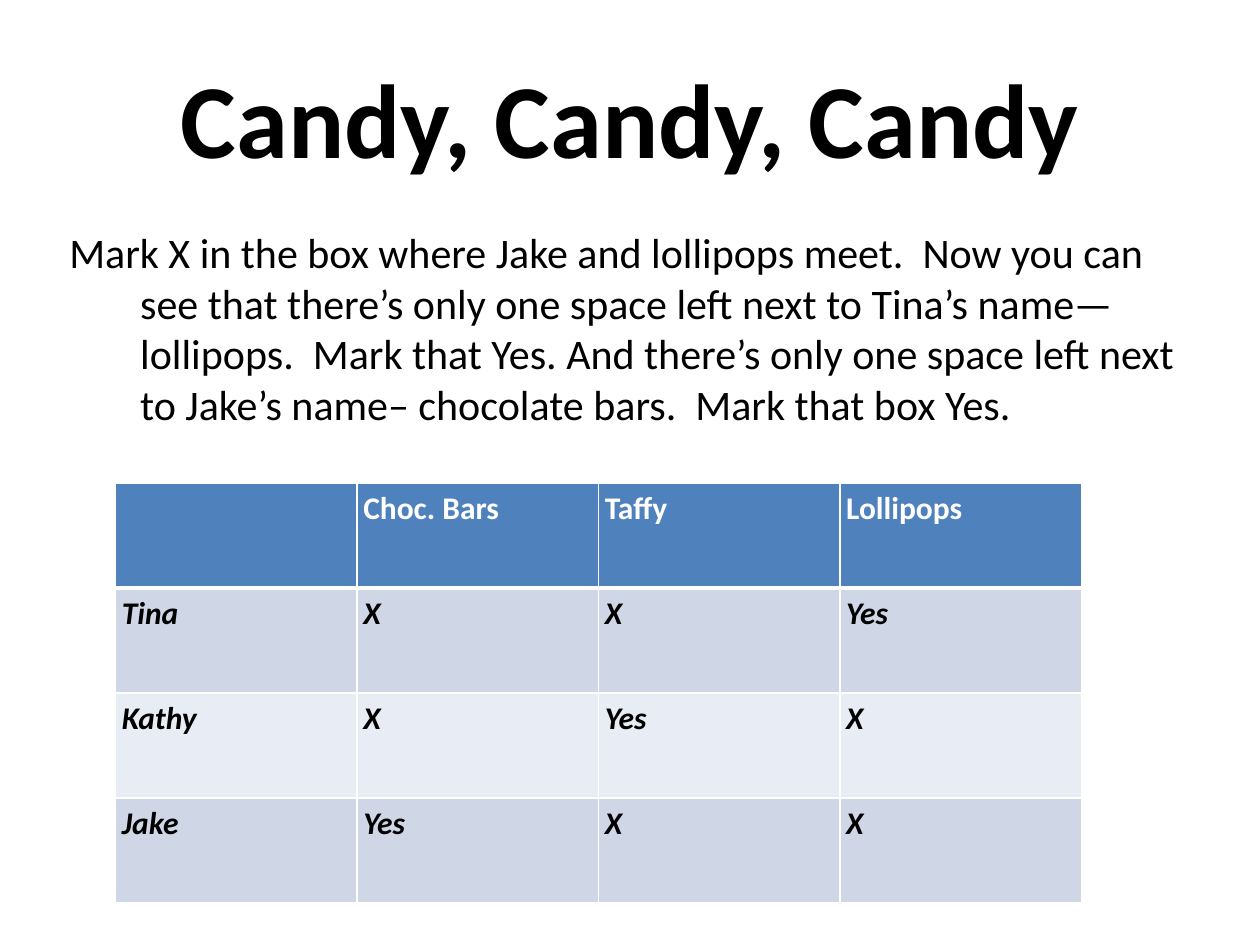
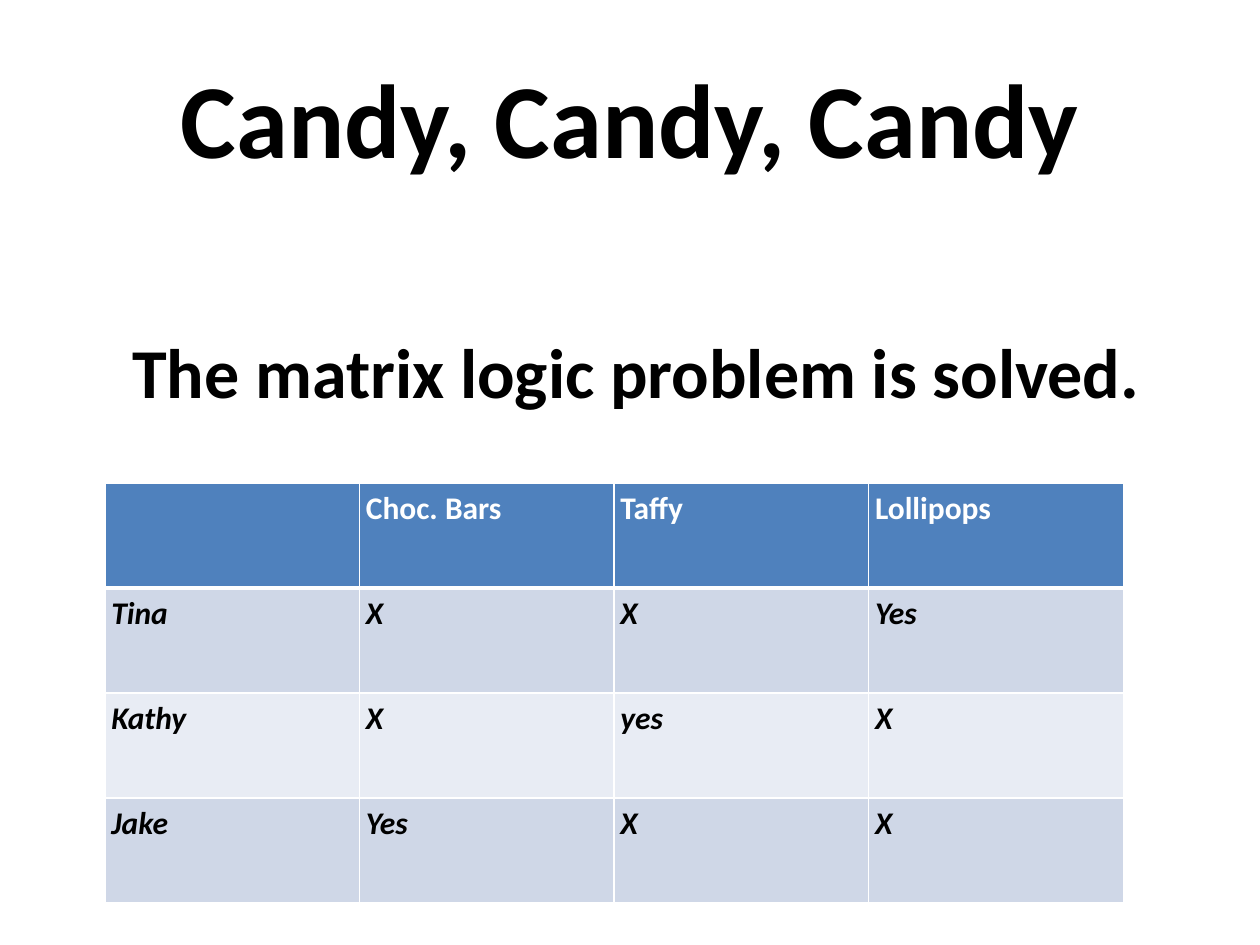
from lxml.etree import SubElement
from pptx import Presentation
from pptx.dml.color import RGBColor
from pptx.enum.text import MSO_ANCHOR, MSO_AUTO_SIZE, PP_ALIGN
from pptx.oxml.ns import qn
from pptx.util import Pt

TITLE = "Candy, Candy, Candy"
CANDIES = ["", "Choc. Bars", "Taffy", "Lollipops"]
SLIDES = [
    {
        "body": "Mark X in the box where Jake and lollipops meet.  Now you can see that "
                "there’s only one space left next to Tina’s name—lollipops.  Mark that Yes. "
                "And there’s only one space left next to Jake’s name– chocolate bars.  "
                "Mark that box Yes.",
        "body_height": 396, "size": 24, "bold": False,
        "top_inset": 3.6, "left_indent": 40.5, "first_indent": -40.5,
        "answers": [["Tina", "X", "X", "Yes"],
                    ["Kathy", "X", "Yes", "X"],
                    ["Jake", "Yes", "X", "X"]],
        "table_left": 66, "column_width": 138,
    },
    {
        "body": "The matrix logic problem is solved.",
        "body_height": 414, "size": 40, "bold": True,
        "top_inset": 62, "left_indent": 36, "first_indent": 0,
        "answers": [["Tina", "X", "X", "Yes"],
                    ["Kathy", "X", "yes", "X"],
                    ["Jake", "Yes", "X", "X"]],
        "table_left": 60, "column_width": 145.5,
    },
]

FONT = "Calibri"
BLACK = RGBColor(0x00, 0x00, 0x00)
WHITE = RGBColor(0xFF, 0xFF, 0xFF)
HEADER_BLUE = RGBColor(0x4F, 0x81, 0xBD)
BAND_DARK = RGBColor(0xCF, 0xD7, 0xE7)
BAND_LIGHT = RGBColor(0xE8, 0xEC, 0xF4)

INSET = 3.6
CONTENT_LEFT, CONTENT_WIDTH = 36, 648
TITLE_TOP, TITLE_HEIGHT = 21.6, 90
BODY_TOP = 126
TABLE_TOP, ROW_HEIGHT = 276, 60
THIN, THICK = 1, 3


def set_insets(target, top=INSET):
    """Set the margins of a text frame or a table cell."""
    target.margin_left = target.margin_right = target.margin_bottom = Pt(INSET)
    target.margin_top = Pt(top)


def format_text(text_frame, size, color=BLACK, bold=False, italic=False):
    for paragraph in text_frame.paragraphs:
        for run in paragraph.runs:
            run.font.name = FONT
            run.font.size = Pt(size)
            run.font.bold = bold
            run.font.italic = italic
            run.font.color.rgb = color


def place(shape, top, height):
    shape.left, shape.top = Pt(CONTENT_LEFT), Pt(top)
    shape.width, shape.height = Pt(CONTENT_WIDTH), Pt(height)


def add_title(slide):
    title = slide.shapes.title
    place(title, TITLE_TOP, TITLE_HEIGHT)
    text_frame = title.text_frame
    text_frame.text = TITLE
    text_frame.auto_size = MSO_AUTO_SIZE.NONE
    text_frame.vertical_anchor = MSO_ANCHOR.MIDDLE
    text_frame.paragraphs[0].alignment = PP_ALIGN.CENTER
    set_insets(text_frame)
    format_text(text_frame, 60, bold=True)


def add_body(slide, content):
    body = slide.placeholders[1]
    place(body, BODY_TOP, content["body_height"])
    text_frame = body.text_frame
    text_frame.text = content["body"]
    text_frame.auto_size = MSO_AUTO_SIZE.NONE
    set_insets(text_frame, content["top_inset"])
    format_text(text_frame, content["size"], bold=content["bold"])
    paragraph = text_frame.paragraphs[0]
    paragraph.space_before = Pt(5)
    properties = paragraph._p.get_or_add_pPr()
    properties.set("marL", str(Pt(content["left_indent"])))
    properties.set("indent", str(Pt(content["first_indent"])))
    SubElement(properties, qn("a:buNone"))


def set_borders(cell, top, bottom):
    properties = cell._tc.get_or_add_tcPr()
    for side, width in (("L", THIN), ("R", THIN), ("T", top), ("B", bottom)):
        line = SubElement(properties, qn(f"a:ln{side}"), w=str(Pt(width)))
        fill = SubElement(line, qn("a:solidFill"))
        SubElement(fill, qn("a:srgbClr"), val=str(WHITE))


def add_matrix(slide, content):
    rows = [CANDIES] + content["answers"]
    columns = len(CANDIES)
    table = slide.shapes.add_table(
        len(rows), columns, Pt(content["table_left"]), Pt(TABLE_TOP),
        Pt(content["column_width"] * columns), Pt(ROW_HEIGHT * len(rows))).table
    for row_index, row in enumerate(rows):
        is_header = row_index == 0
        band = BAND_DARK if row_index % 2 else BAND_LIGHT
        for column_index, text in enumerate(row):
            cell = table.cell(row_index, column_index)
            cell.text = text
            set_insets(cell)
            set_borders(cell, top=THICK if row_index == 1 else THIN,
                        bottom=THICK if is_header else THIN)
            cell.fill.solid()
            cell.fill.fore_color.rgb = HEADER_BLUE if is_header else band
            format_text(cell.text_frame, 18, WHITE if is_header else BLACK,
                        bold=True, italic=not is_header)


def main():
    presentation = Presentation()
    presentation.slide_width, presentation.slide_height = Pt(720), Pt(540)
    for content in SLIDES:
        slide = presentation.slides.add_slide(presentation.slide_layouts[1])
        add_title(slide)
        add_body(slide, content)
        add_matrix(slide, content)
    presentation.save("out.pptx")


if __name__ == "__main__":
    main()
